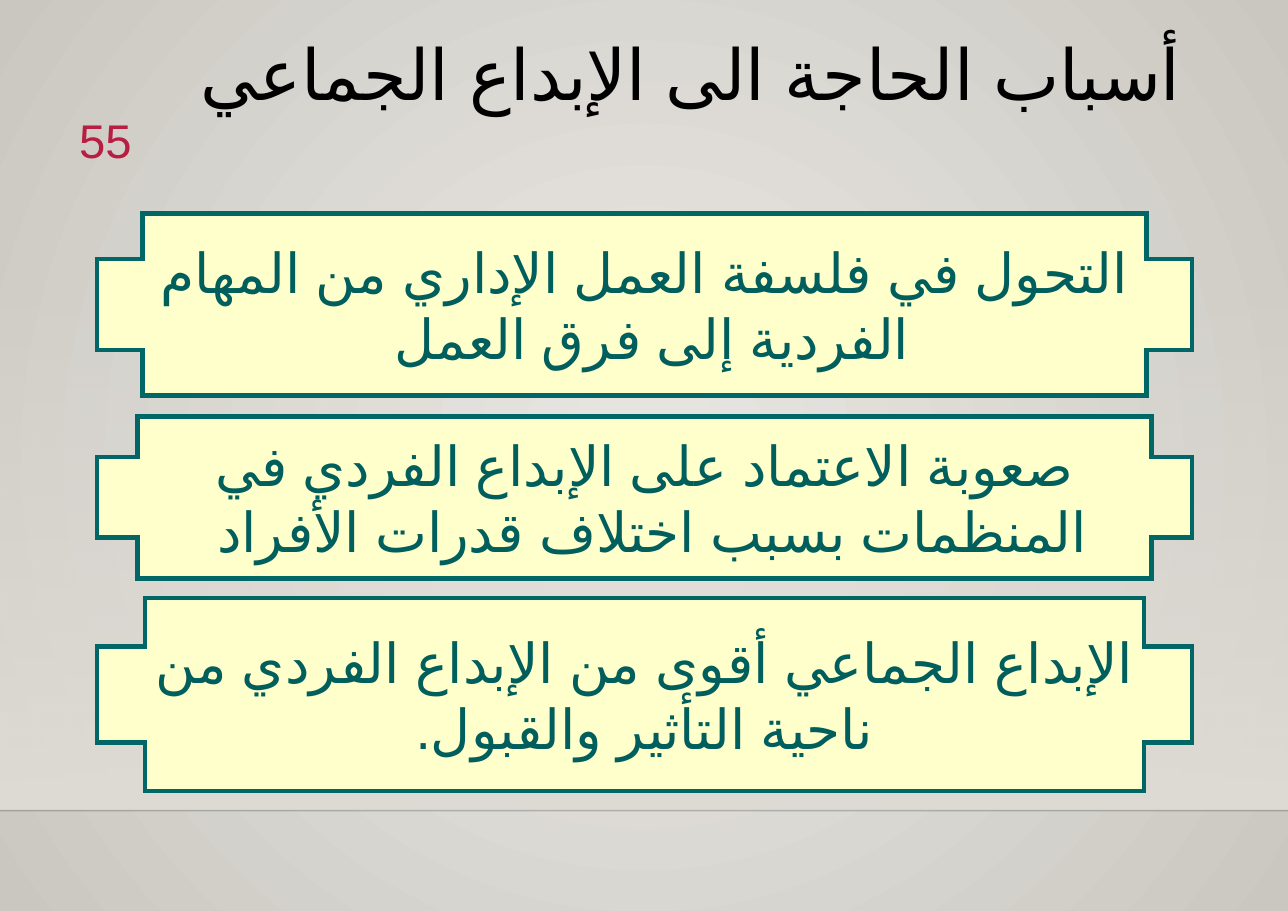
from lxml import etree
from pptx import Presentation, util as u
from pptx.dml.color import RGBColor
from pptx.enum import lang, shapes, text
from pptx.oxml import parse_xml
from pptx.oxml.ns import nsdecls, qn

COLORS = {
    "back_center": "ECEAE7", "back_edge": "CAC7C1", "wall": "DFDBD5",
    "floor_line": "000001", "title": "000000", "number": "B71E42",
    "card": "FFFFCC", "card_line": "006666", "card_text": "005E5C",
}
FONT = "Arial"
LEFT, WIDTH = 0.88, 9.94
# top, height and wording of each reason
REASONS = [
    (1.94, 1.65, "التحول في فلسفة العمل الإداري من المهام الفردية إلى فرق العمل "),
    (3.78, 1.47, "صعوبة الاعتماد على الإبداع الفردي في المنظمات بسبب اختلاف قدرات الأفراد "),
    (5.43, 1.75, "الإبداع الجماعي أقوى من الإبداع الفردي من ناحية التأثير والقبول."),
]


def rgb(name):
    return RGBColor.from_string(COLORS[name])


def set_gradient(fill, owner, stops, direction):
    """Fill with (color name, opacity percent) stops spread evenly."""
    fill.solid()
    solid = next(owner.iter(qn("a:solidFill")))
    step = 100000 // (len(stops) - 1)
    stop_xml = "".join(
        f'<a:gs pos="{index * step}"><a:srgbClr val="{COLORS[name]}">'
        f'<a:alpha val="{opacity * 1000}"/></a:srgbClr></a:gs>'
        for index, (name, opacity) in enumerate(stops))
    gradient = parse_xml(f'<a:gradFill {nsdecls("a")} rotWithShape="1">'
                         f"<a:gsLst>{stop_xml}</a:gsLst>{direction}</a:gradFill>")
    solid.getparent().replace(solid, gradient)


def write(frame, words, size, color, align, anchor, spacing=None):
    """Put one right-to-left paragraph in a text frame."""
    frame.word_wrap = True
    frame.vertical_anchor = anchor
    para = frame.paragraphs[0]
    para.alignment = align
    para.line_spacing = spacing
    para._p.get_or_add_pPr().set("rtl", "1")
    span = para.add_run()
    span.text = words
    span.font.name = FONT
    span.font.size = u.Pt(size)
    span.font.color.rgb = rgb(color)
    span.font.language_id = lang.MSO_LANGUAGE_ID.ARABIC
    span.font._element.set("lang", "ar-SA")
    etree.SubElement(span.font._element, qn("a:cs"), typeface=FONT)


def add_text(page, left, top, width, height, words, **style):
    box = page.shapes.add_textbox(*map(u.Inches, (left, top, width, height)))
    write(box.text_frame, words, **style)


def add_wall(page):
    """Add the band that fades in towards the floor line."""
    wall = page.shapes.add_shape(shapes.MSO_SHAPE.RECTANGLE, 0, u.Inches(2.43),
                                 u.Inches(11.69), u.Inches(4.92))
    wall.shadow.inherit = False
    wall.line.fill.background()
    set_gradient(wall.fill, wall._element, [("wall", 0), ("wall", 100)],
                 '<a:lin ang="5400000" scaled="0"/>')


def add_floor_line(page):
    line = page.shapes.add_connector(shapes.MSO_CONNECTOR.STRAIGHT, 0, u.Inches(7.36),
                                     u.Inches(11.69), u.Inches(7.36))
    line.line.width = u.Pt(1)
    line.line.color.rgb = rgb("floor_line")
    color = next(line._element.iter(qn("a:srgbClr")))
    etree.SubElement(color, qn("a:alpha"), val="20000")
    etree.SubElement(line._element.spPr, qn("a:effectLst"))


def add_reason(page, top, height, words):
    card = page.shapes.add_shape(shapes.MSO_SHAPE.CROSS,
                                 *map(u.Inches, (LEFT, top, WIDTH, height)))
    card.adjustments[0] = 0.25
    card.shadow.inherit = False
    card.fill.solid()
    card.fill.fore_color.rgb = rgb("card")
    card.line.color.rgb = rgb("card_line")
    card.line.width = u.Pt(3)
    outline = next(card._element.iter(qn("a:ln")))
    etree.SubElement(outline, qn("a:miter"), lim="800000")
    frame = card.text_frame
    frame.margin_left = frame.margin_right = u.Inches(0.11)
    frame.margin_top = frame.margin_bottom = u.Inches(0.06)
    write(frame, words, size=36, color="card_text",
          align=text.PP_ALIGN.CENTER, anchor=text.MSO_ANCHOR.MIDDLE)


def main():
    deck = Presentation()
    deck.slide_width, deck.slide_height = u.Inches(11.69), u.Inches(8.27)
    page = deck.slides.add_slide(deck.slide_layouts[6])
    set_gradient(page.background.fill, page.element,
                 [("back_center", 100), ("back_edge", 100)],
                 '<a:path path="circle"><a:fillToRect l="50000" t="50000" '
                 'r="50000" b="50000"/></a:path>')
    add_wall(page)
    add_floor_line(page)
    add_text(page, LEFT, 0.31, WIDTH, 1.04, "أسباب الحاجة الى الإبداع الجماعي",
             size=46, color="title", align=text.PP_ALIGN.RIGHT,
             anchor=text.MSO_ANCHOR.TOP, spacing=0.9)
    add_text(page, 0.62, 0.96, 1.02, 0.61, "55", size=30.9, color="number",
             align=text.PP_ALIGN.LEFT, anchor=text.MSO_ANCHOR.BOTTOM)
    for top, height, words in REASONS:
        add_reason(page, top, height, words)
    deck.save("out.pptx")


if __name__ == "__main__":
    main()
